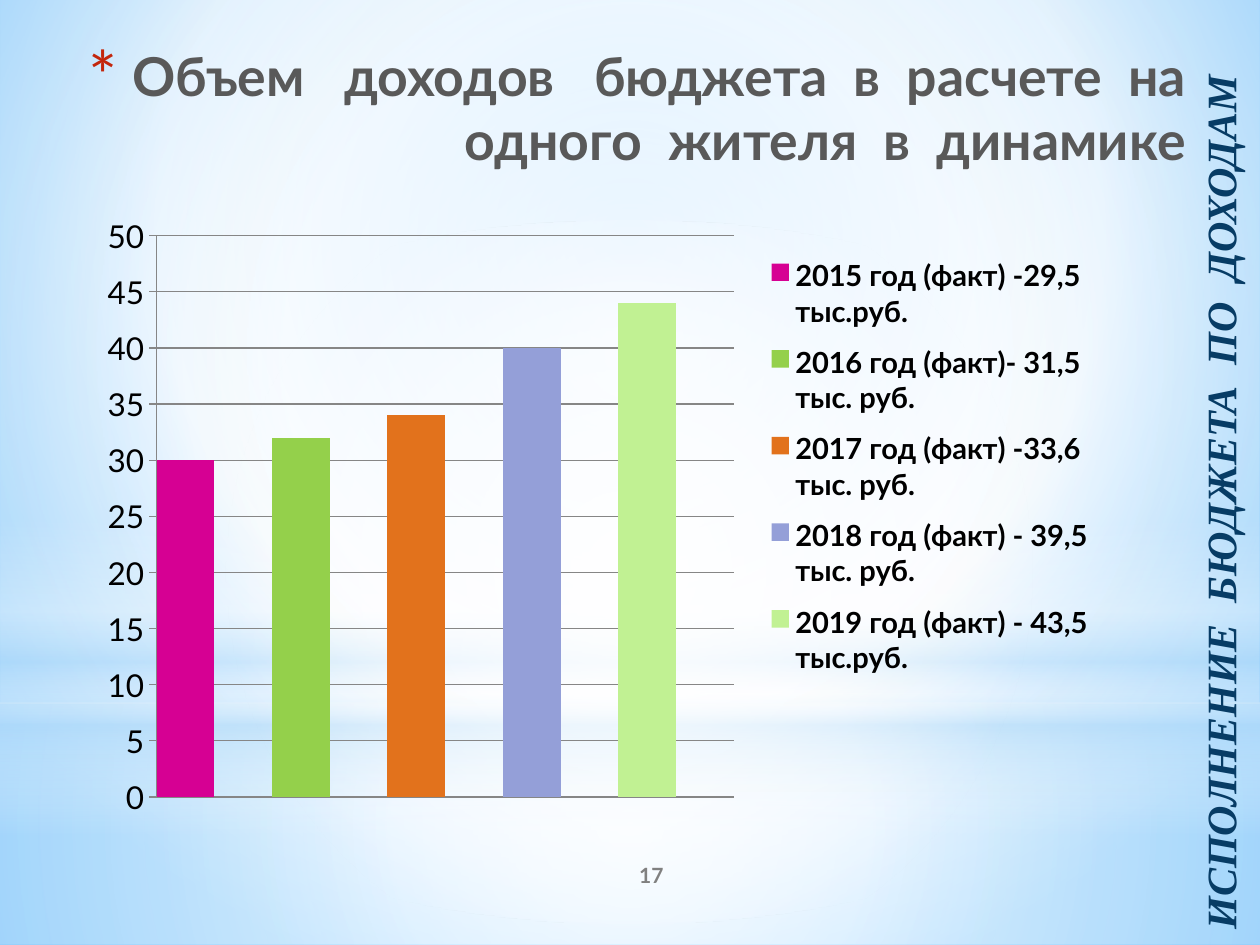
"""Build a slide on budget income per resident, with a column chart."""
from pptx import Presentation as Deck
from pptx.chart.data import CategoryChartData as Data
from pptx.dml.color import RGBColor as RGB
from pptx.enum.chart import XL_CHART_TYPE as Kind, XL_LEGEND_POSITION as Side, XL_TICK_MARK as Tick
from pptx.enum.shapes import MSO_SHAPE as Form
from pptx.enum.text import MSO_ANCHOR as Anchor, PP_ALIGN as Align
from pptx.oxml import parse_xml as xml
from pptx.oxml.ns import nsdecls as spaces, qn
from pptx.util import Inches, Pt

WIDE, HIGH = Inches(10), Inches(7.5)
SANS, SERIF = "Lato", "Times New Roman"
WHITE, SKY, PALE, BLUE = (RGB.from_string(c) for c in ("FFFFFF", "B4DCFA", "9ED5FF", "5BB9FF"))
GREY, DIM, NAVY = RGB(0x59, 0x59, 0x59), RGB(0x80, 0x80, 0x80), RGB(0x07, 0x3C, 0x65)
RED, BLACK, LINE = RGB(0xC3, 0x26, 0x0C), RGB(0, 0, 0), RGB(0x86, 0x86, 0x86)
PINK, GREEN, RUST = RGB(0xD6, 0, 0x93), RGB(0x94, 0xD0, 0x4B), RGB(0xE2, 0x72, 0x1C)
LILAC, LIME = RGB(0x94, 0x9F, 0xD8), RGB(0xC1, 0xF1, 0x93)

MID = (50, 50, 50, 50)
LAYERS = [
    (Form.RECTANGLE, (0, 74.4, 100, 25.6), [(0, WHITE, 91), (37, WHITE, 76), (100, SKY, 79)], MID),
    (Form.RECTANGLE, (0, 0, 100, 74.4), [(0, WHITE, 89), (48, WHITE, 62), (100, SKY, 79)], MID),
    (Form.RECTANGLE, (0, 55, 100, 33.3), [(0, WHITE, 0), (29, WHITE, 30), (45, SKY, 40),
                                          (55, WHITE, 26), (65, SKY, 60), (100, WHITE, 0)], None),
    (Form.OVAL, (0, 23.3, 100, 74.4), [(0, WHITE, 100), (56, WHITE, 0)], MID),
]
YEARS = [
    ("2015 год (факт) -29,5 тыс.руб.", 30, PINK),
    ("2016 год (факт)- 31,5 тыс. руб.", 32, GREEN),
    ("2017 год (факт) -33,6 тыс. руб.", 34, RUST),
    ("2018 год (факт) - 39,5 тыс. руб.", 40, LILAC),
    ("2019 год (факт) - 43,5 тыс.руб.", 44, LIME),
]


def area(x, y, w, h):
    """Turn percent shares of the slide into lengths."""
    return [int(size * part / 100) for size, part in zip((WIDE, HIGH) * 2, (x, y, w, h))]


def style(item, looks):
    """Set each format value on an object."""
    for key, value in looks.items():
        if key == "color":
            item.color.rgb = value
        else:
            setattr(item, key, value)


def blend(stops, focus):
    """Make a gradient fill, round about a focus or else running down."""
    marks = "".join(
        f'<a:gs pos="{pos * 1000}"><a:srgbClr val="{tint}"><a:alpha val="{alpha * 1000}"/>'
        f'</a:srgbClr></a:gs>' for pos, tint, alpha in stops)
    way = '<a:lin ang="5400000" scaled="0"/>'
    if focus:
        edges = " ".join(f'{k}="{v * 1000}"' for k, v in zip("ltrb", focus))
        way = f'<a:path path="circle"><a:fillToRect {edges}/></a:path>'
    return f'<a:gradFill {spaces("a")} rotWithShape="1"><a:gsLst>{marks}</a:gsLst>{way}</a:gradFill>'


def back(slide):
    """Fill the slide's background."""
    fill = blend([(0, PALE, 100), (60, WHITE, 100), (100, BLUE, 100)], (20, 10, 20, 60))
    slide.element.cSld.insert(0, xml(
        f'<p:bg {spaces("p", "a")}><p:bgPr>{fill}<a:effectLst/></p:bgPr></p:bg>'))


def layer(slide, form, spot, stops, focus):
    """Add one soft layer of light."""
    shape = slide.shapes.add_shape(form, *area(*spot))
    shape.shadow.inherit = False
    shape.line.fill.background()
    shape.fill.background()
    props = shape.element.spPr
    props.replace(props.find(qn("a:noFill")), xml(blend(stops, focus)))


def bullet(para):
    """Give a paragraph a red star with a hanging indent."""
    props = para._p.get_or_add_pPr()
    props.set("marL", str(Inches(0.35)))
    props.set("indent", str(-Inches(0.35)))
    for mark in (f'buClr {spaces("a")}><a:srgbClr val="{RED}"/></a:buClr',
                 f'buSzPct {spaces("a")} val="128000"/',
                 f'buFont {spaces("a")} typeface="{SANS}"/',
                 f'buChar {spaces("a")} char="*"/'):
        props.append(xml(f"<a:{mark}>"))


def label(slide, spot, text, looks, frame, align=Align.CENTER, gaps=(), star=False):
    """Add text, with extra points of space after each word."""
    box = slide.shapes.add_textbox(*area(*spot))
    style(box.text_frame, {"word_wrap": True, **frame})
    para = box.text_frame.paragraphs[0]
    para.alignment = align
    if star:
        bullet(para)
    words = text.split()
    for i, word in enumerate(words):
        para.add_run().text = word
        if i < len(words) - 1:
            gap = para.add_run()
            gap.text = " "
            gap.font._element.set("spc", str(int(gaps[i] * 100)))
    for run in para.runs:
        style(run.font, looks)
    return box


def layout(x, y, w, h, inner=False):
    """Make a fixed layout from shares of the chart."""
    target = '<c:layoutTarget val="inner"/>' if inner else ""
    modes = '<c:xMode val="edge"/><c:yMode val="edge"/>'
    sizes = "".join(f'<c:{k} val="{v}"/>' for k, v in zip("xywh", (x, y, w, h)))
    return xml(f'<c:layout {spaces("c")}><c:manualLayout>{target}{modes}{sizes}'
               f'</c:manualLayout></c:layout>')


def arrange(chart):
    """Fix the plot and legend, and list only the years in the legend."""
    plot = chart.element.find(".//" + qn("c:plotArea"))
    key = chart.element.find(".//" + qn("c:legend"))
    for part in (plot, key):
        for old in part.findall(qn("c:layout")):
            part.remove(old)
    plot.insert(0, layout(0.07, 0.05, 0.57, 0.9, True))
    key.insert(1, layout(0.67, 0.06, 0.33, 0.72))
    for i in reversed(range(1, 2 * len(YEARS), 2)):
        key.insert(1, xml(f'<c:legendEntry {spaces("c")}><c:idx val="{i}"/>'
                          f'<c:delete val="1"/></c:legendEntry>'))


def columns(slide, spot):
    """Add the chart, with an empty series after each year."""
    data = Data()
    data.categories = ["1"]
    for i, (name, value, _) in enumerate(YEARS):
        data.add_series(name, [value])
        data.add_series(f"Series {2 * i + 2}", [None])
    chart = slide.shapes.add_chart(Kind.COLUMN_CLUSTERED, *area(*spot), data).chart
    style(chart, {"has_title": False, "has_legend": True})
    style(chart.font, {"name": SANS, "size": Pt(18), "color": BLACK})
    style(chart.legend, {"position": Side.RIGHT, "include_in_layout": False})
    style(chart.legend.font, {"name": SANS, "size": Pt(16.6), "bold": True, "color": BLACK})
    style(chart.plots[0], {"gap_width": 0, "overlap": 0, "vary_by_categories": False})
    for series, (_, _, tint) in zip(list(chart.plots[0].series)[::2], YEARS):
        series.format.fill.solid()
        series.format.fill.fore_color.rgb = tint
    chart.category_axis.visible = False
    axis = chart.value_axis
    style(axis, {"minimum_scale": 0, "maximum_scale": 50, "major_unit": 5,
                 "has_major_gridlines": True, "major_tick_mark": Tick.OUTSIDE})
    for line in (axis.format.line, axis.major_gridlines.format.line):
        style(line, {"color": LINE, "width": Pt(0.75)})
    arrange(chart)


def main():
    """Build and save the slide."""
    deck = Deck()
    style(deck, {"slide_width": WIDE, "slide_height": HIGH})
    slide = deck.slides.add_slide(deck.slide_layouts[6])
    back(slide)
    for item in LAYERS:
        layer(slide, *item)
    label(slide, (41.7, 90, 20, 5.3), "17",
          {"name": SANS, "size": Pt(12), "bold": True, "color": DIM},
          {"vertical_anchor": Anchor.MIDDLE})
    label(slide, (5.1, 3.9, 90, 15.3),
          "Объем доходов бюджета в расчете на одного жителя в динамике",
          {"name": SANS, "size": Pt(30.6), "bold": True, "color": GREY},
          {"vertical_anchor": Anchor.TOP}, Align.RIGHT,
          (15, 15, 7.5, 7.5, 7.5, 0, 7.5, 7.5, 7.5), True)
    columns(slide, (6.8, 21.65, 80.4, 66))
    side = label(slide, (55.9, 45.3, 74, 15.7), "ИСПОЛНЕНИЕ БЮДЖЕТА ПО ДОХОДАМ",
                 {"name": SERIF, "size": Pt(24), "bold": True, "italic": True, "color": NAVY},
                 {"vertical_anchor": Anchor.BOTTOM, "margin_left": Inches(0.05), "margin_top": 0,
                  "margin_right": Inches(0.05), "margin_bottom": 0}, gaps=(6, 6, 6))
    side.rotation = 270
    deck.save("out.pptx")


if __name__ == "__main__":
    main()
